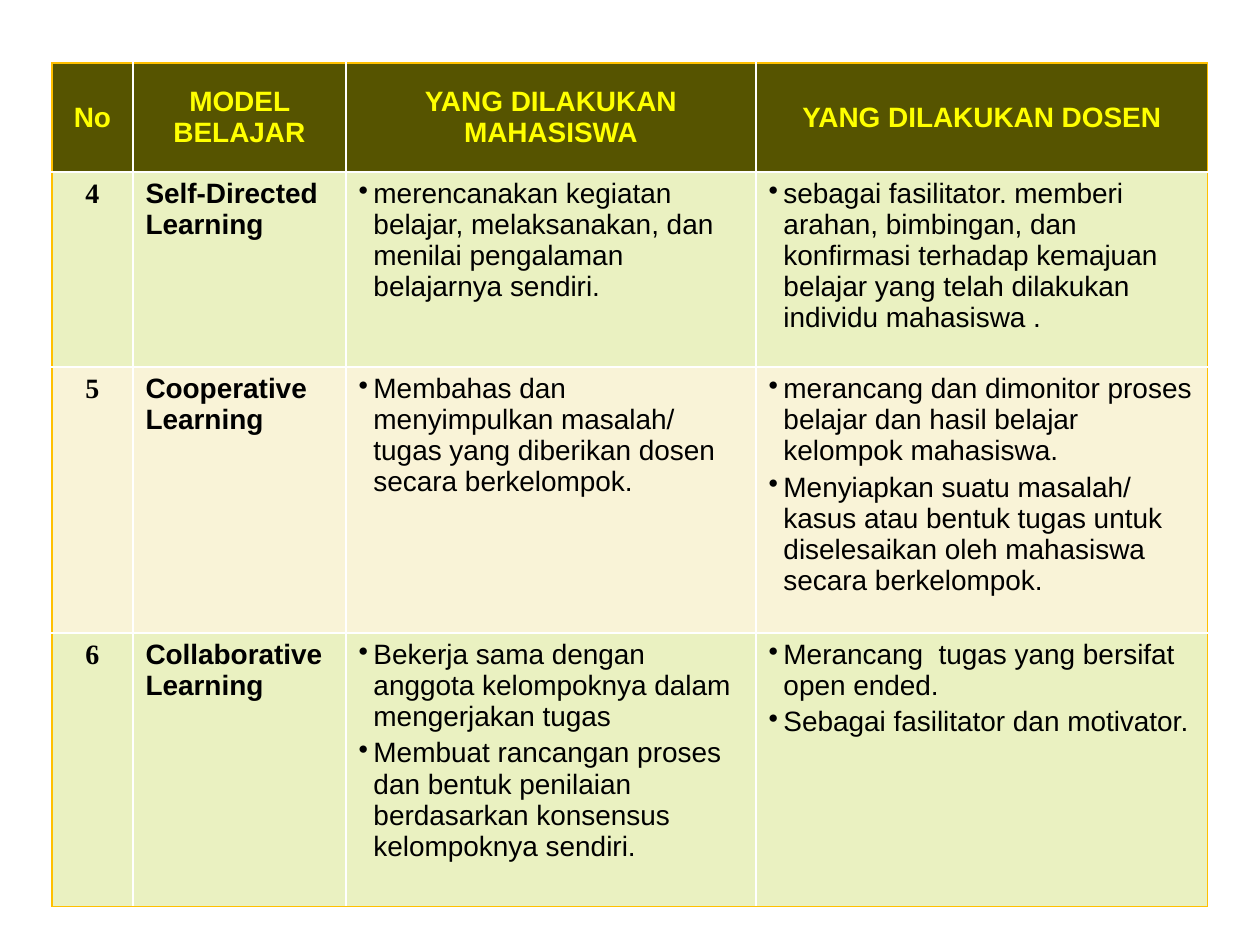
from lxml import etree
from pptx import Presentation
from pptx.dml.color import RGBColor
from pptx.enum.text import MSO_ANCHOR, PP_ALIGN
from pptx.oxml.ns import qn
from pptx.util import Emu, Inches, Pt

CENTER, LEFT = PP_ALIGN.CENTER, PP_ALIGN.LEFT
MIDDLE, TOP = MSO_ANCHOR.MIDDLE, MSO_ANCHOR.TOP

PX_PER_INCH = 126
TABLE_LEFT, TABLE_TOP = 52, 63
COLUMN_WIDTHS = [81, 213, 410, 452]
ROW_HEIGHTS = [109, 195, 266, 274]
BULLET_INDENT = 15

SANS, SERIF = "Arial", "Times New Roman"
BLACK, YELLOW, WHITE, GOLD = "000000", "FFFF00", "FFFFFF", "FFC000"
HEADER_FILL = "565400"
BODY_FILLS = ["EAF1C1", "F9F3D7"]

HEADERS = ["No", "MODEL BELAJAR", "YANG DILAKUKAN MAHASISWA", "YANG DILAKUKAN DOSEN"]
MODELS = [
    ("4", "Self-Directed Learning",
     ["merencanakan kegiatan belajar, melaksanakan, dan menilai pengalaman "
      "belajarnya sendiri."],
     ["sebagai fasilitator. memberi arahan, bimbingan, dan konfirmasi terhadap "
      "kemajuan belajar yang telah dilakukan individu mahasiswa ."]),
    ("5", "Cooperative Learning",
     ["Membahas dan menyimpulkan masalah/ tugas yang diberikan dosen secara "
      "berkelompok."],
     ["merancang dan dimonitor proses belajar dan hasil belajar kelompok mahasiswa.",
      "Menyiapkan suatu masalah/ kasus atau bentuk tugas untuk diselesaikan oleh "
      "mahasiswa secara berkelompok."]),
    ("6", "Collaborative Learning",
     ["Bekerja sama dengan anggota kelompoknya dalam mengerjakan tugas",
      "Membuat rancangan proses dan bentuk penilaian berdasarkan konsensus "
      "kelompoknya sendiri."],
     ["Merancang  tugas yang bersifat open ended.",
      "Sebagai fasilitator dan motivator."]),
]


def px(length):
    return Emu(round(length * Inches(1) / PX_PER_INCH))


def rgb(color):
    return RGBColor.from_string(color)


def add_bullet(paragraph):
    properties = paragraph._p.get_or_add_pPr()
    properties.set("marL", str(px(BULLET_INDENT)))
    properties.set("indent", str(-px(BULLET_INDENT)))
    etree.SubElement(properties, qn("a:buChar"), char="•")


def write_cell(cell, texts, font=SANS, color=BLACK, bold=False, align=LEFT,
               anchor=TOP, bullets=False):
    cell.vertical_anchor = anchor
    frame = cell.text_frame
    for index, text in enumerate(texts):
        paragraph = frame.add_paragraph() if index else frame.paragraphs[0]
        paragraph.alignment = align
        if index:
            paragraph.space_before = Pt(3)
        if bullets:
            add_bullet(paragraph)
        run = paragraph.add_run()
        run.text = text
        run.font.name = font
        run.font.size = Pt(16)
        run.font.bold = bold
        run.font.color.rgb = rgb(color)


def set_border(cell, side, color, width):
    line = etree.SubElement(cell._tc.get_or_add_tcPr(), qn(f"a:ln{side}"),
                            w=str(Pt(width)))
    fill = etree.SubElement(line, qn("a:solidFill"))
    etree.SubElement(fill, qn("a:srgbClr"), val=color)


def style_cells(table):
    """Gold lines around the table, white lines inside, alternating row fills."""
    last_row, last_column = len(ROW_HEIGHTS) - 1, len(COLUMN_WIDTHS) - 1
    for row_index, row in enumerate(table.rows):
        for column_index, cell in enumerate(row.cells):
            outer_sides = {
                "L": column_index == 0,
                "R": column_index == last_column,
                "T": row_index == 0,
                "B": row_index == last_row,
            }
            for side, is_outer in outer_sides.items():
                set_border(cell, side, *((GOLD, 0.75) if is_outer else (WHITE, 1)))
            cell.fill.solid()
            body_fill = BODY_FILLS[(row_index - 1) % 2]
            cell.fill.fore_color.rgb = rgb(body_fill if row_index else HEADER_FILL)


def add_model_table(slide):
    table = slide.shapes.add_table(
        len(ROW_HEIGHTS), len(COLUMN_WIDTHS), px(TABLE_LEFT), px(TABLE_TOP),
        px(sum(COLUMN_WIDTHS)), px(sum(ROW_HEIGHTS))).table
    for column, width in zip(table.columns, COLUMN_WIDTHS):
        column.width = px(width)
    for row, height in zip(table.rows, ROW_HEIGHTS):
        row.height = px(height)
    style_cells(table)

    for column_index, header in enumerate(HEADERS):
        write_cell(table.cell(0, column_index), [header], color=YELLOW, bold=True,
                   align=CENTER, anchor=MIDDLE)
    for row_index, (number, model, student_tasks, lecturer_tasks) in enumerate(MODELS, 1):
        write_cell(table.cell(row_index, 0), [number], font=SERIF, bold=True,
                   align=CENTER)
        write_cell(table.cell(row_index, 1), [model], bold=True)
        write_cell(table.cell(row_index, 2), student_tasks, bullets=True)
        write_cell(table.cell(row_index, 3), lecturer_tasks, bullets=True)


def main():
    presentation = Presentation()
    presentation.slide_width = Inches(10)
    presentation.slide_height = Inches(7.5)
    slide = presentation.slides.add_slide(presentation.slide_layouts[6])
    add_model_table(slide)
    presentation.save("out.pptx")


if __name__ == "__main__":
    main()
